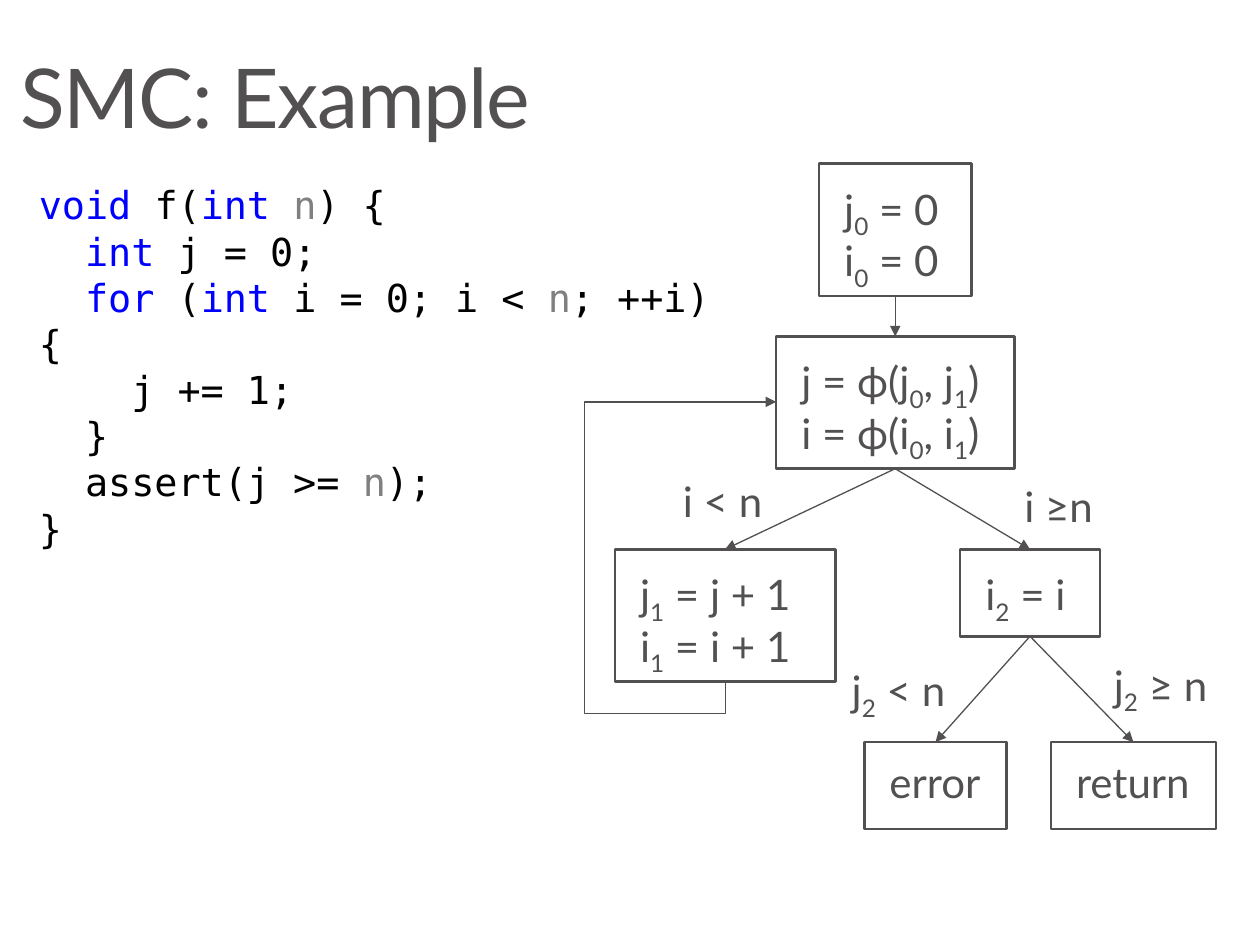
import pptx
import pptx.dml.color
import pptx.enum.shapes
import pptx.enum.text
import pptx.oxml
import pptx.oxml.ns
import pptx.util
from pptx.util import Inches

GREY = pptx.dml.color.RGBColor(0x52, 0x50, 0x51)
BLACK = pptx.dml.color.RGBColor(0, 0, 0)
BLUE = pptx.dml.color.RGBColor(0, 0, 0xFF)
PARAM_GREY = pptx.dml.color.RGBColor(0x80, 0x80, 0x80)

TOP, BOTTOM = 0, 2  # connection sites of a rectangle

# Bars separate the coloured tokens
CODE = [
    "void| f(|int| |n|) {",
    "  |int| j = 0;",
    "  |for| (|int| i = 0; i < |n|; ++i) {",
    "    j += 1;",
    "  }",
    "  assert(j >= |n|);",
    "}",
]
TOKEN_COLORS = {"void": BLUE, "int": BLUE, "for": BLUE, "n": PARAM_GREY}

# Name: left, top, width, height, text (an underscore lowers the next character)
BLOCKS = {
    "entry": (6.5, 1.3, 1.21, 1.05, "j_0 = 0\ni_0 = 0"),
    "phi": (6.16, 2.67, 1.89, 1.05, "j = ϕ(j_0, j_1)\ni = ϕ(i_0, i_1)"),
    "body": (4.88, 4.36, 1.75, 1.05, "j_1 = j + 1\ni_1 = i + 1"),
    "exit": (7.62, 4.36, 1.11, 0.69, "i_2 = i"),
    "error": (6.86, 5.89, 1.13, 0.69, "error"),
    "return": (8.34, 5.89, 1.31, 0.69, "return"),
}
EDGES = [("entry", "phi"), ("phi", "body"), ("phi", "exit"),
         ("exit", "error"), ("exit", "return")]
CONDITIONS = [
    (5.22, 3.66, 1.09, 0.69, "i < n"),
    (7.93, 3.7, 1, 0.69, "i ≥n"),
    (6.56, 5.12, 1.21, 0.69, "j_2 < n"),
    (8.64, 5.08, 1.22, 0.69, "j_2 ≥ n"),
]


def set_font(font, name, size, color):
    font.name = name
    font.size = pptx.util.Pt(size)
    font.color.rgb = color


def add_run(p, text, subscript=False):
    r = p.add_run()
    r.text = text
    if subscript:
        r.font._element.set("baseline", "-25000")


def add_title(s, text):
    sp = s.shapes.title
    sp.left, sp.top, sp.width, sp.height = map(Inches, (0, 0.32, 9.41, 0.98))
    tf = sp.text_frame
    tf.margin_left = tf.margin_right = Inches(0.16)
    tf.margin_top = tf.margin_bottom = Inches(0.1)
    tf.vertical_anchor = pptx.enum.text.MSO_ANCHOR.MIDDLE
    p = tf.paragraphs[0]
    p.alignment = pptx.enum.text.PP_ALIGN.LEFT
    p.line_spacing = 0.9
    set_font(p.font, "Lato", 47.1, GREY)
    add_run(p, text)
    p.runs[0].font._element.set("spc", "-80")


def add_code(s):
    sp = s.shapes.add_textbox(*map(Inches, (0.21, 1.39, 5.55, 2.69)))
    tf = sp.text_frame
    tf.word_wrap = True
    for i, line in enumerate(CODE):
        p = tf.add_paragraph() if i else tf.paragraphs[0]
        for token in line.split("|"):
            r = p.add_run()
            r.text = token
            set_font(r.font, "DejaVu Sans Mono", 22, TOKEN_COLORS.get(token, BLACK))


def fill_text(sp, text):
    tf = sp.text_frame
    tf.word_wrap = False
    tf.margin_left = tf.margin_right = Inches(0.2)
    tf.margin_top = tf.margin_bottom = Inches(0.16)
    tf.vertical_anchor = pptx.enum.text.MSO_ANCHOR.TOP
    p = tf.paragraphs[0]
    p.alignment = pptx.enum.text.PP_ALIGN.LEFT
    p.line_spacing = 0.9
    p.space_after = pptx.util.Pt(6)
    set_font(p.font, "Lato", 24, GREY)
    for i, line in enumerate(text.split("\n")):
        if i:
            p.add_line_break()
            p._p[-1].get_or_add_rPr().set("sz", "2400") if hasattr(p._p[-1], "get_or_add_rPr") else None
        first, *rest = line.split("_")
        add_run(p, first)
        for part in rest:
            add_run(p, part[0], subscript=True)
            if part[1:]:
                add_run(p, part[1:])


def add_block(s, left, top, width, height, text):
    sp = s.shapes.add_shape(pptx.enum.shapes.MSO_SHAPE.RECTANGLE,
                            *map(Inches, (left, top, width, height)))
    sp.shadow.inherit = False
    sp.fill.background()
    sp.line.color.rgb = GREY
    sp.line.width = pptx.util.Pt(1.5)
    fill_text(sp, text)
    return sp


def add_label(s, left, top, width, height, text):
    fill_text(s.shapes.add_textbox(*map(Inches, (left, top, width, height))), text)


def add_arrow(s, kind, ends=(0, 0, 0, 0)):
    cx = s.shapes.add_connector(kind, *map(Inches, ends))
    cx.line.color.rgb = GREY
    cx.line.width = pptx.util.Pt(0.75)
    tail = pptx.oxml.parse_xml(
        f'<a:tailEnd {pptx.oxml.ns.nsdecls("a")} type="triangle"/>')
    cx.line._get_or_add_ln().append(tail)
    cx._element.spPr.append(pptx.oxml.parse_xml(
        f'<a:effectLst {pptx.oxml.ns.nsdecls("a")}/>'))
    return cx


def add_edge(s, source, target):
    cx = add_arrow(s, pptx.enum.shapes.MSO_CONNECTOR.STRAIGHT)
    cx.begin_connect(source, BOTTOM)
    cx.end_connect(target, TOP)


def add_back_edge(s):
    # The ends are those before the quarter turn
    cx = add_arrow(s, pptx.enum.shapes.MSO_CONNECTOR.ELBOW, (7.07, 4.5, 4.85, 4.1))
    spPr = cx._element.spPr
    spPr.find(pptx.oxml.ns.qn("a:xfrm")).set("rot", "5400000")
    geom = spPr.find(pptx.oxml.ns.qn("a:prstGeom"))
    geom.set("prst", "bentConnector4")
    guides = "".join(f'<a:gd name="adj{i}" fmla="val {value}"/>'
                     for i, value in enumerate((-11300, -279700), 1))
    for old in list(geom):
        geom.remove(old)
    geom.append(pptx.oxml.parse_xml(
        f'<a:avLst {pptx.oxml.ns.nsdecls("a")}>{guides}</a:avLst>'))


def main():
    prs = pptx.Presentation()
    prs.slide_width, prs.slide_height = Inches(10), Inches(7.5)
    s = prs.slides.add_slide(prs.slide_layouts[5])

    # Title and source code
    add_title(s, "SMC: Example")
    add_code(s)

    # Control flow graph
    blocks = {name: add_block(s, *block) for name, block in BLOCKS.items()}
    for source, target in EDGES:
        add_edge(s, blocks[source], blocks[target])
    add_back_edge(s)
    for condition in CONDITIONS:
        add_label(s, *condition)

    prs.save("out.pptx")


if __name__ == "__main__":
    main()
